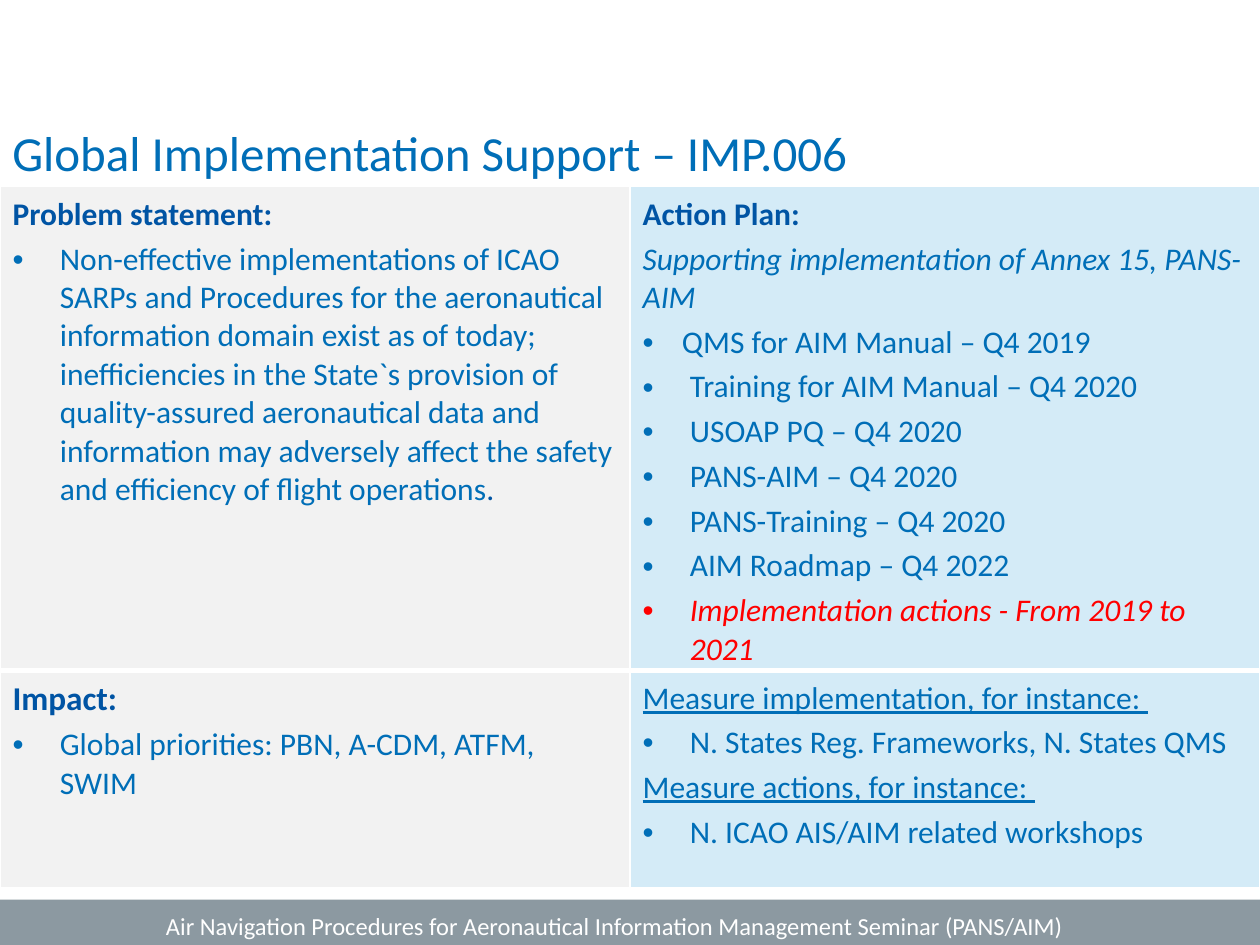
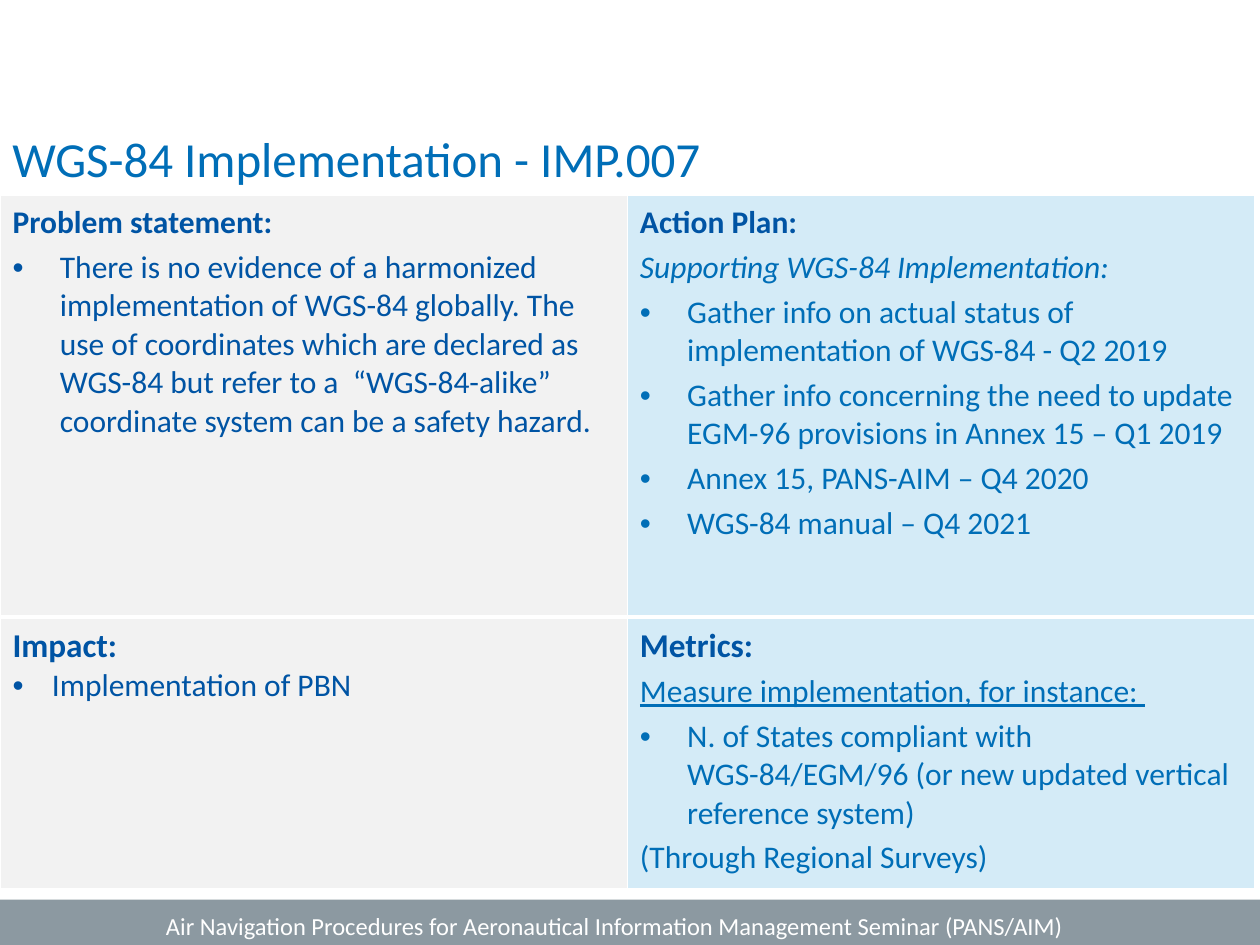
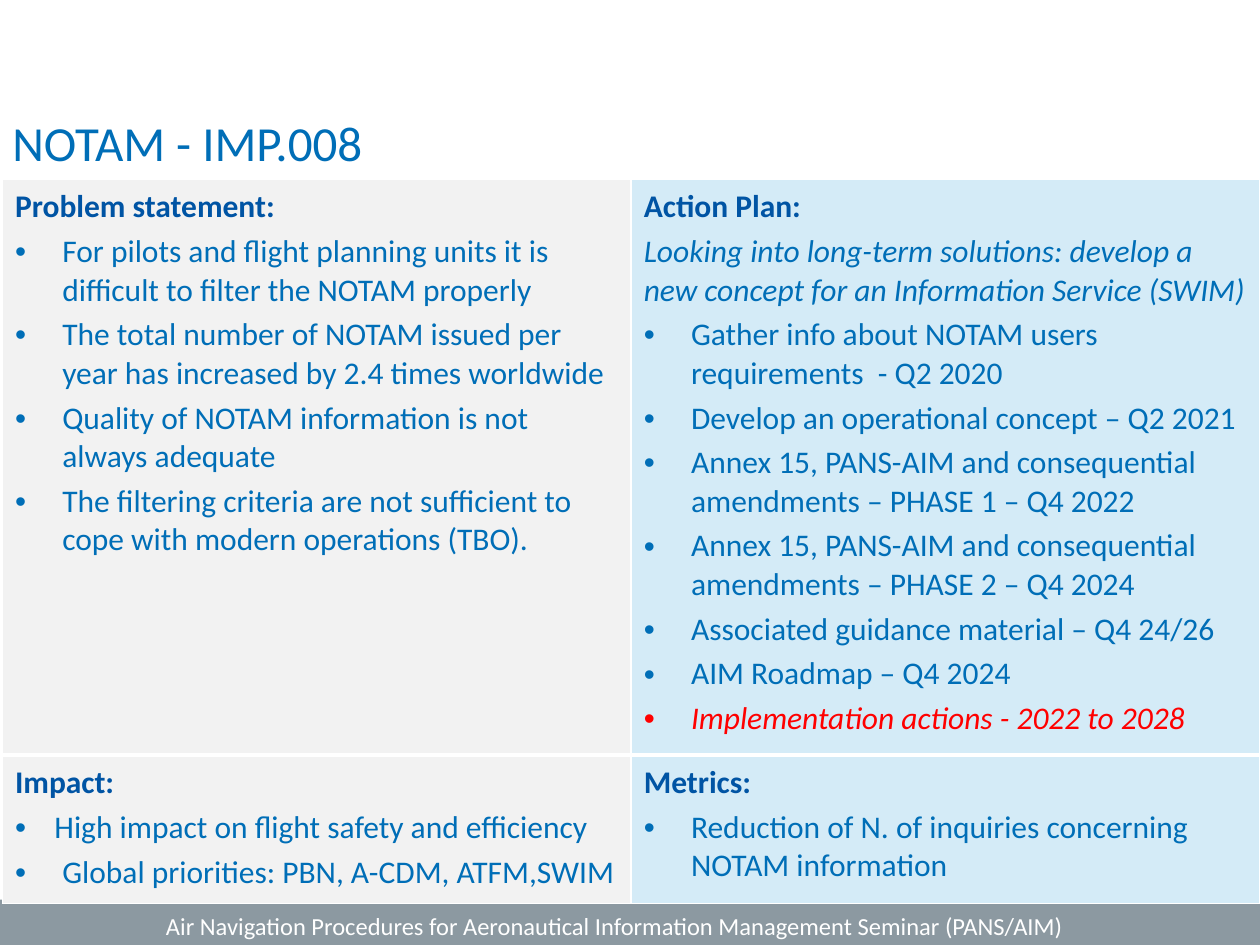
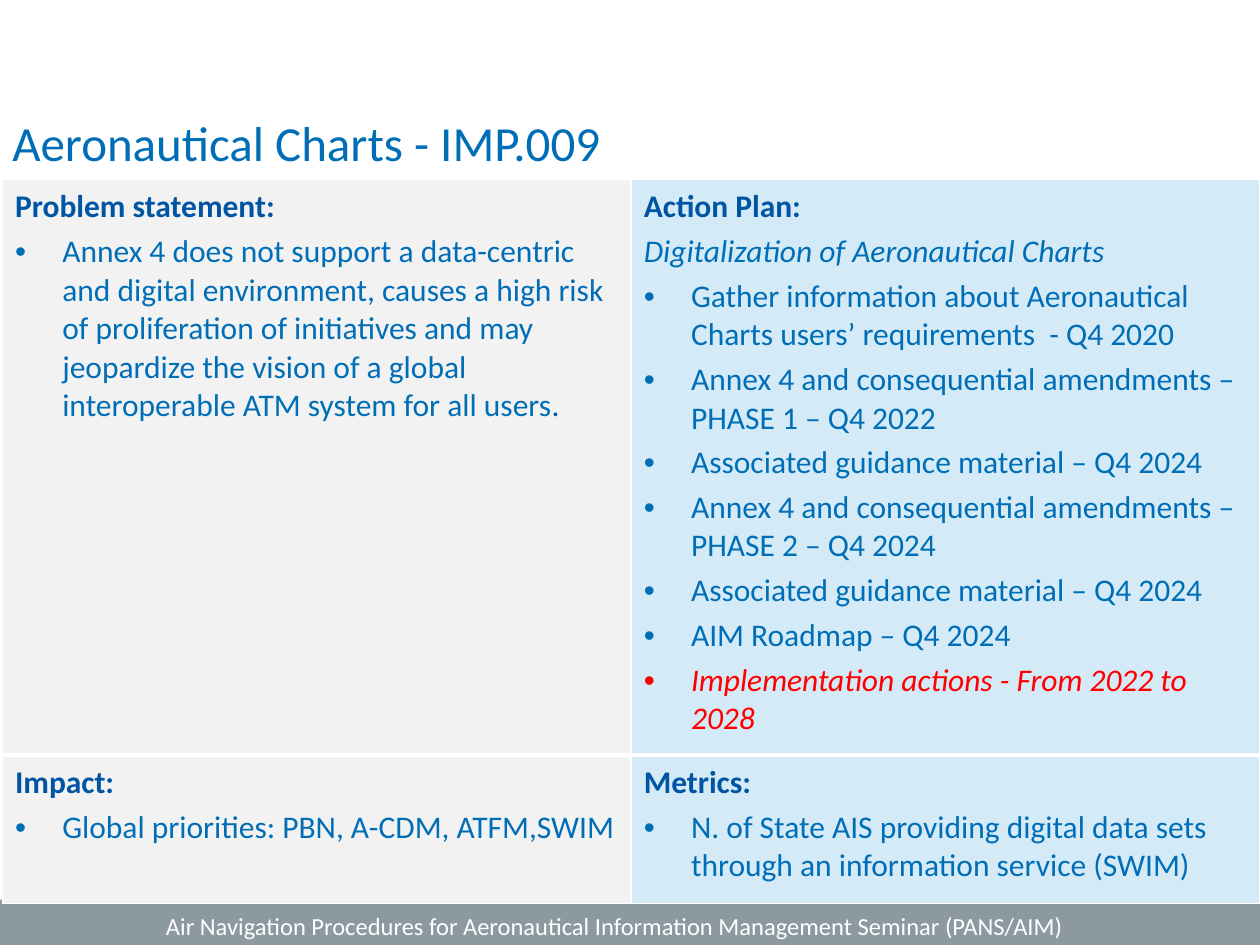
from dataclasses import dataclass
from typing import NamedTuple

from lxml import etree
from pptx import Presentation
from pptx import util as u
from pptx.dml import color
from pptx.enum import shapes, text
from pptx.oxml import ns


# Theme
@dataclass(frozen=True)
class Theme:
    font: str = "Calibri"
    blue: str = "006EB7"
    navy: str = "0054A4"
    red: str = "FF0000"
    white: str = "FFFFFF"
    band: str = "8C99A1"
    left_fill: str = "F2F2F2"
    right_fill: str = "D4EBF7"
    title_size: float = 28
    body_size: float = 18
    large_size: float = 19
    footer_size: float = 14
    paragraph_gap: float = 3.6
    wide_indent: float = 27
    tight_indent: float = 22.5


THEME = Theme()
SLIDE_WIDTH, SLIDE_HEIGHT = 720, 540
FOOTER = "Air Navigation Procedures for Aeronautical Information Management Seminar (PANS/AIM)"


class Box(NamedTuple):
    left: float
    top: float
    width: float
    height: float


BAND_BOX = Box(0, 514, SLIDE_WIDTH, 26)
FOOTER_BOX = Box(87.8, 517, 556, 41)


@dataclass(frozen=True)
class Line:
    """One paragraph of a table cell; dark_end is a closing part in navy."""
    text: str
    color: str = THEME.blue
    size: float = THEME.body_size
    bold: bool = False
    italic: bool = False
    underline: bool = False
    indent: float = 0
    gap: float = THEME.paragraph_gap
    dark_end: str = ""


def heading(words: str, size: float = THEME.body_size) -> Line:
    return Line(words, THEME.navy, size, bold=True)


def aim(words: str) -> Line:
    return Line(words, italic=True)


def measure(words: str) -> Line:
    return Line(words, underline=True)


def bullet(words: str, **changes) -> Line:
    return Line(words, **{"indent": THEME.wide_indent, **changes})


def tight_bullet(words: str, **changes) -> Line:
    return bullet(words, indent=THEME.tight_indent, **changes)


def actions(words: str) -> Line:
    return bullet(words, color=THEME.red, italic=True)


@dataclass(frozen=True)
class Topic:
    title: str
    title_box: Box
    table_box: Box
    row_heights: tuple[float, float]
    problem: list[Line]
    plan: list[Line]
    impact: list[Line]
    metrics: list[Line]


# Content
LATE_LAYOUT = dict(title_box=Box(0, 60.5, 648, 70), table_box=Box(1.4, 102.4, 718.6, 414),
                   row_heights=(329, 85))
PROBLEM = heading("Problem statement:")
PLAN = heading("Action Plan:")
IMPACT, METRICS = heading("Impact:"), heading("Metrics:")
LARGE_IMPACT = heading("Impact:", THEME.large_size)
LARGE_METRICS = heading("Metrics:", THEME.large_size)

TOPICS = [
    Topic(
        "Global Implementation Support – IMP.006",
        Box(0, 66.2, 720, 70), Box(0, 106.6, 720, 397), (273, 124),
        problem=[PROBLEM, bullet(
            "Non-effective implementations of ICAO SARPs and Procedures for the aeronautical "
            "information domain exist as of today; inefficiencies in the State`s provision of "
            "quality-assured aeronautical data and information may adversely affect the safety "
            "and efficiency of flight operations", dark_end=".")],
        plan=[PLAN,
              aim("Supporting implementation of Annex 15, PANS-AIM"),
              tight_bullet("QMS for AIM Manual – Q4 2019"),
              bullet("Training for AIM Manual – Q4 2020"),
              bullet("USOAP PQ – Q4 2020"),
              bullet("PANS-AIM – Q4 2020"),
              bullet("PANS-Training – Q4 2020"),
              bullet("AIM Roadmap – Q4 2022"),
              actions("Implementation actions - From 2019 to 2021")],
        impact=[LARGE_IMPACT, bullet("Global priorities: PBN, A-CDM, ATFM, SWIM")],
        metrics=[measure("Measure implementation, for instance: "),
                 bullet("N. States Reg. Frameworks, N. States QMS"),
                 measure("Measure actions, for instance: "),
                 bullet("N. ICAO AIS/AIM related workshops")],
    ),
    Topic(
        "WGS-84 Implementation - IMP.007",
        Box(0, 70, 720, 70), Box(0, 111.4, 717, 396.7), (241.2, 155.5),
        problem=[PROBLEM, bullet(
            "There is no evidence of a harmonized implementation of WGS-84 globally. The use of "
            "coordinates which are declared as WGS-84 but refer to a  “WGS-84-alike” coordinate "
            "system can be a safety hazard.", color=THEME.navy)],
        plan=[PLAN,
              aim("Supporting WGS-84 Implementation:"),
              bullet("Gather info on actual status of implementation of WGS-84 - Q2 2019"),
              bullet("Gather info concerning the need to update EGM-96 provisions in Annex 15 "
                     "– Q1 2019"),
              bullet("Annex 15, PANS-AIM – Q4 2020"),
              bullet("WGS-84 manual – Q4 2021")],
        impact=[LARGE_IMPACT, tight_bullet("Implementation of PBN", color=THEME.navy, gap=0)],
        metrics=[LARGE_METRICS,
                 measure("Measure implementation, for instance: "),
                 bullet("N. of States compliant with WGS-84/EGM/96 (or new updated vertical "
                        "reference system)"),
                 Line("(Through Regional Surveys)")],
    ),
    Topic(
        "NOTAM - IMP.008", **LATE_LAYOUT,
        problem=[PROBLEM,
                 bullet("For pilots and flight planning units it is difficult to filter the "
                        "NOTAM properly"),
                 bullet("The total number of NOTAM issued per year has increased by 2.4 times "
                        "worldwide"),
                 bullet("Quality of NOTAM information is not always adequate"),
                 bullet("The filtering criteria are not sufficient to cope with modern "
                        "operations (TBO).")],
        plan=[PLAN,
              aim("Looking into long-term solutions: develop a new concept for an Information "
                  "Service (SWIM)"),
              bullet("Gather info about NOTAM users requirements  - Q2 2020"),
              bullet("Develop an operational concept – Q2 2021"),
              bullet("Annex 15, PANS-AIM and consequential amendments – PHASE 1 – Q4 2022"),
              bullet("Annex 15, PANS-AIM and consequential amendments – PHASE 2 – Q4 2024"),
              bullet("Associated guidance material – Q4 24/26"),
              bullet("AIM Roadmap – Q4 2024"),
              actions("Implementation actions - 2022 to 2028")],
        impact=[IMPACT,
                tight_bullet("High impact on flight safety and efficiency"),
                bullet("Global priorities: PBN, A-CDM, ATFM,SWIM")],
        metrics=[METRICS,
                 bullet("Reduction of N. of inquiries concerning NOTAM information")],
    ),
    Topic(
        "Aeronautical Charts - IMP.009", **LATE_LAYOUT,
        problem=[PROBLEM, bullet(
            "Annex 4 does not support a data-centric and digital environment, causes a high risk "
            "of proliferation of initiatives and may jeopardize the vision of a global "
            "interoperable ATM system for all users", dark_end=".")],
        plan=[PLAN,
              aim("Digitalization of Aeronautical Charts"),
              bullet("Gather information about Aeronautical Charts users’ requirements  "
                     "- Q4 2020"),
              bullet("Annex 4 and consequential amendments – PHASE 1 – Q4 2022"),
              bullet("Associated guidance material – Q4 2024"),
              bullet("Annex 4 and consequential amendments – PHASE 2 – Q4 2024"),
              bullet("Associated guidance material – Q4 2024"),
              bullet("AIM Roadmap – Q4 2024"),
              actions("Implementation actions - From 2022 to 2028")],
        impact=[IMPACT, bullet("Global priorities: PBN, A-CDM, ATFM,SWIM")],
        metrics=[METRICS,
                 bullet("N. of State AIS providing digital data sets through an information "
                        "service (SWIM)")],
    ),
]


# Drawing helpers
def rgb(value: str) -> color.RGBColor:
    return color.RGBColor.from_string(value)


def points(box: Box) -> list[u.Length]:
    return [u.Pt(length) for length in box]


def style_run(run, line: Line) -> None:
    font = run.font
    font.name, font.size = THEME.font, u.Pt(line.size)
    font.bold, font.italic, font.underline = line.bold, line.italic, line.underline
    font.color.rgb = rgb(line.color)


def add_bullet(paragraph, indent: float) -> None:
    properties = paragraph._p.get_or_add_pPr()
    properties.set("marL", str(u.Pt(indent)))
    properties.set("indent", str(-u.Pt(indent)))
    etree.SubElement(properties, ns.qn("a:buFont"), typeface="Arial")
    etree.SubElement(properties, ns.qn("a:buChar"), char="•")


def write_lines(text_frame, lines: list[Line]) -> None:
    for index, line in enumerate(lines):
        paragraph = text_frame.add_paragraph() if index else text_frame.paragraphs[0]
        paragraph.text = line.text
        if line.indent:
            add_bullet(paragraph, line.indent)
        if index:
            paragraph.space_before = u.Pt(line.gap)
        style_run(paragraph.runs[0], line)
        if line.dark_end:
            ending = paragraph.add_run()
            ending.text = line.dark_end
            style_run(ending, Line(line.dark_end, THEME.navy))


def add_text(slide, box: Box, line: Line) -> None:
    text_frame = slide.shapes.add_textbox(*points(box)).text_frame
    text_frame.word_wrap = True
    text_frame.vertical_anchor = text.MSO_ANCHOR.TOP
    write_lines(text_frame, [line])


def add_band(slide) -> None:
    band = slide.shapes.add_shape(shapes.MSO_SHAPE.RECTANGLE, *points(BAND_BOX))
    band.shadow.inherit = False
    band.fill.solid()
    band.fill.fore_color.rgb = rgb(THEME.band)
    band.line.fill.background()


def add_borders(cell, bottom_width: float) -> None:
    properties = cell._tc.get_or_add_tcPr()
    for side, width in (("L", 1), ("R", 1), ("T", 1), ("B", bottom_width)):
        border = etree.SubElement(properties, ns.qn(f"a:ln{side}"), w=str(u.Pt(width)))
        fill = etree.SubElement(border, ns.qn("a:solidFill"))
        etree.SubElement(fill, ns.qn("a:srgbClr"), val=THEME.white)


def fill_cell(cell, lines: list[Line], fill: str, bottom_width: float) -> None:
    cell.margin_left = cell.margin_right = u.Pt(7.2)
    cell.margin_top = cell.margin_bottom = u.Pt(5)
    add_borders(cell, bottom_width)
    cell.fill.solid()
    cell.fill.fore_color.rgb = rgb(fill)
    write_lines(cell.text_frame, lines)


def add_topic_table(slide, topic: Topic) -> None:
    table = slide.shapes.add_table(2, 2, *points(topic.table_box)).table
    table.first_row = table.horz_banding = False
    for column in table.columns:
        column.width = u.Pt(topic.table_box.width / 2)
    contents = ((topic.problem, topic.plan), (topic.impact, topic.metrics))
    for row_index, row_lines in enumerate(contents):
        table.rows[row_index].height = u.Pt(topic.row_heights[row_index])
        bottom_width = 1 if row_index else 3
        for column_index, fill in enumerate((THEME.left_fill, THEME.right_fill)):
            fill_cell(table.cell(row_index, column_index), row_lines[column_index],
                      fill, bottom_width)


def build_slide(presentation, topic: Topic) -> None:
    slide = presentation.slides.add_slide(presentation.slide_layouts[6])
    add_band(slide)
    add_text(slide, topic.title_box, Line(topic.title, size=THEME.title_size))
    add_topic_table(slide, topic)
    add_text(slide, FOOTER_BOX, Line(FOOTER, THEME.white, THEME.footer_size))


def main() -> None:
    presentation = Presentation()
    presentation.slide_width = u.Pt(SLIDE_WIDTH)
    presentation.slide_height = u.Pt(SLIDE_HEIGHT)
    for topic in TOPICS:
        build_slide(presentation, topic)
    presentation.save("out.pptx")


if __name__ == "__main__":
    main()
